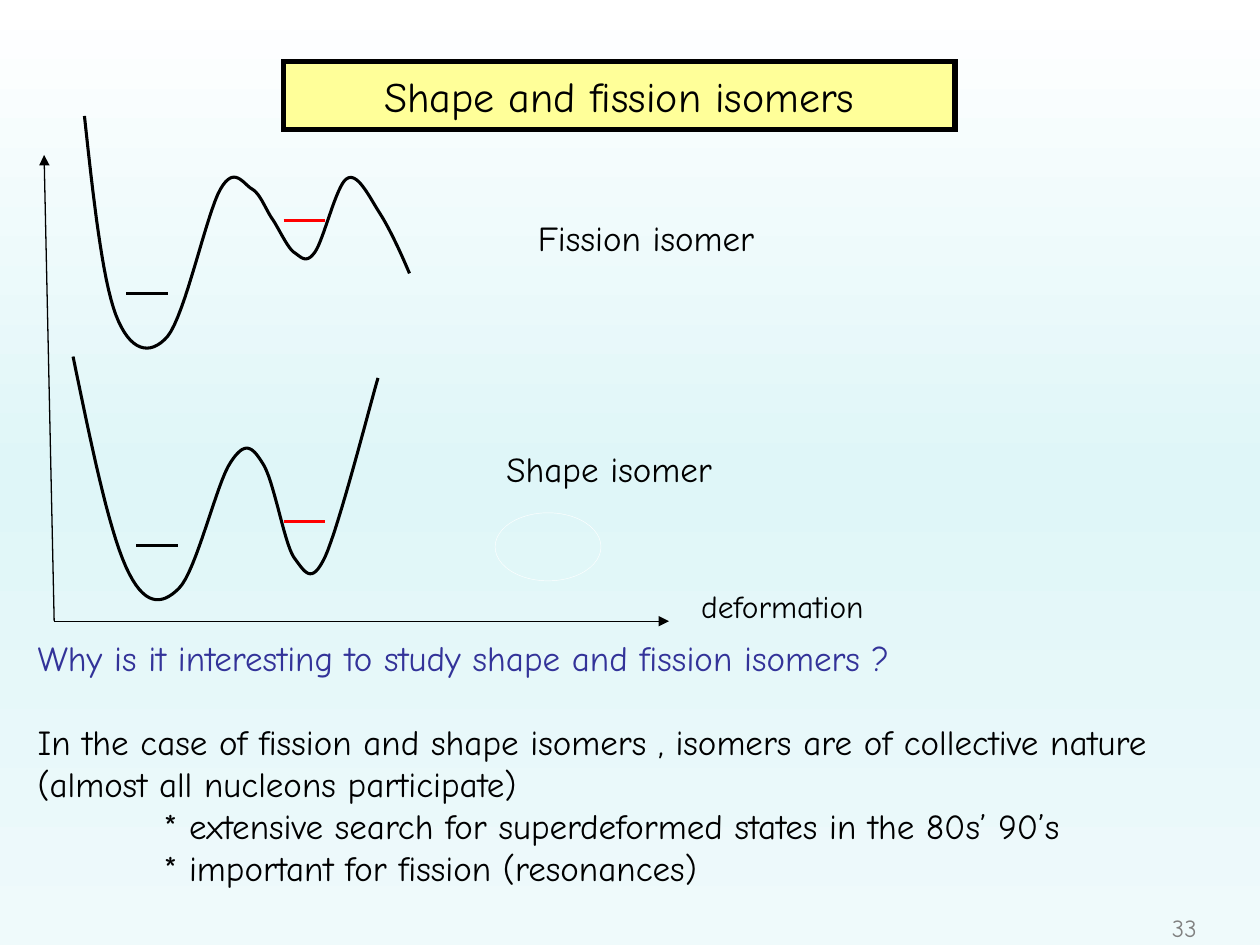
from copy import deepcopy
from dataclasses import dataclass

from lxml.etree import SubElement
from pptx import Presentation
from pptx.dml.color import RGBColor
from pptx.enum.shapes import MSO_CONNECTOR, MSO_SHAPE
from pptx.enum.text import MSO_ANCHOR, PP_ALIGN
from pptx.oxml.ns import qn
from pptx.util import Inches, Pt


@dataclass(frozen=True)
class Theme:
    font: str = "Comic Neue"
    black: str = "000000"
    white: str = "FFFFFF"
    red: str = "FF0000"
    blue: str = "333399"
    grey: str = "808080"
    yellow: str = "FFFF99"
    background: tuple = ((0, "FFFFFF"), (0.5, "DFF6F8"), (1, "EFFAFB"))
    title_size: int = 24
    body_size: int = 20
    axis_size: int = 18
    number_size: int = 14
    title_line: float = 3
    curve_line: float = 1.75
    axis_line: float = 0.75
    hairline: float = 0.25


THEME = Theme()

# Start point, then cubic segments (two control points and an end point each).
FISSION_CURVE = (
    (0.67, 0.92),
    ((0.74, 1.56), (0.81, 2.21), (0.92, 2.5)),
    ((1.03, 2.79), (1.19, 2.83), (1.33, 2.67)),
    ((1.47, 2.5), (1.64, 1.69), (1.75, 1.5)),
    ((1.86, 1.31), (1.93, 1.46), (2, 1.5)),
    ((2.07, 1.54), (2.11, 1.67), (2.17, 1.75)),
    ((2.22, 1.83), (2.28, 1.96), (2.33, 2)),
    ((2.39, 2.04), (2.43, 2.1), (2.5, 2)),
    ((2.57, 1.9), (2.67, 1.47), (2.75, 1.42)),
    ((2.83, 1.36), (2.92, 1.54), (3, 1.67)),
    ((3.08, 1.79), (3.17, 1.98), (3.25, 2.17)),
)
SHAPE_CURVE = (
    (0.58, 2.83),
    ((0.72, 3.51), (0.86, 4.19), (1, 4.5)),
    ((1.14, 4.81), (1.28, 4.81), (1.42, 4.67)),
    ((1.56, 4.53), (1.72, 3.83), (1.83, 3.67)),
    ((1.94, 3.5), (2, 3.54), (2.08, 3.67)),
    ((2.17, 3.79), (2.25, 4.29), (2.33, 4.42)),
    ((2.42, 4.54), (2.47, 4.65), (2.58, 4.42)),
    ((2.69, 4.18), (2.93, 3.24), (3, 3)),
)
ORIGIN = (0.43, 4.93)
LEVEL_WIDTH = 0.33
BODY = (
    ("Why is it interesting to study shape and fission isomers ?", {"color": THEME.blue}),
    ("In the case of fission and shape isomers , isomers are of collective nature",
     {"before": 24}),
    ("(almost all nucleons participate)", {}),
    ("* extensive search for superdeformed states in the 80s’ 90’s", {"indent": 1}),
    ("* important for fission (resonances)", {"indent": 1}),
)


def set_background(slide):
    fill = slide.background.fill
    fill.gradient()
    fill.gradient_angle = 270
    stop_list = slide.element.find(".//" + qn("a:gsLst"))
    stop_list.append(deepcopy(stop_list[0]))
    for stop, (position, color) in zip(fill.gradient_stops, THEME.background):
        stop.position = position
        stop.color.rgb = RGBColor.from_string(color)


def set_line(shape, color, width):
    shape.line.color.rgb = RGBColor.from_string(color)
    shape.line.width = Pt(width)


def write(paragraph, text, size=THEME.body_size, color=THEME.black,
          align=PP_ALIGN.LEFT, before=0, indent=0):
    if indent:
        paragraph._p.get_or_add_pPr().set("marL", str(Inches(indent)))
    paragraph.text = text
    for name, value in {"alignment": align, "space_before": Pt(before)}.items():
        setattr(paragraph, name, value)
    for name, value in {"name": THEME.font, "size": Pt(size), "bold": False}.items():
        setattr(paragraph.font, name, value)
    paragraph.font.color.rgb = RGBColor.from_string(color)


def add_title(slide, text):
    title = slide.shapes.title
    place = {"left": 2.25, "top": 0.49, "width": 5.33, "height": 0.54}
    for name, value in place.items():
        setattr(title, name, Inches(value))
    title.fill.solid()
    title.fill.fore_color.rgb = RGBColor.from_string(THEME.yellow)
    set_line(title, THEME.black, THEME.title_line)
    SubElement(title.line._get_or_add_ln(), qn("a:miter"), lim="800000")
    title.text_frame.vertical_anchor = MSO_ANCHOR.MIDDLE
    write(title.text_frame.paragraphs[0], text, THEME.title_size, align=PP_ALIGN.CENTER)


def add_text(slide, box, lines):
    """Add a text box; each line is a pair of text and format values."""
    frame = slide.shapes.add_textbox(*map(Inches, box)).text_frame
    frame.word_wrap = True
    for index, (text, style) in enumerate(lines):
        paragraph = frame.add_paragraph() if index else frame.paragraphs[0]
        write(paragraph, text, **style)


def add_segment(shapes, start, end, color, width, arrow=False):
    segment = shapes.add_connector(MSO_CONNECTOR.STRAIGHT, *map(Inches, (*start, *end)))
    set_line(segment, color, width)
    if arrow:
        SubElement(segment.line._get_or_add_ln(), qn("a:tailEnd"), type="triangle")
    SubElement(segment._element.spPr, qn("a:effectLst"))


def bezier_points(curve, steps=16):
    """Yield points, as lengths, along the cubic segments after the start point."""
    start = curve[0]
    for first, second, end in curve[1:]:
        for step in range(1, steps + 1):
            t = step / steps
            weights = ((1 - t) ** 3, 3 * t * (1 - t) ** 2, 3 * t ** 2 * (1 - t), t ** 3)
            yield tuple(
                Inches(sum(w * p[axis] for w, p in zip(weights, (start, first, second, end))))
                for axis in (0, 1)
            )
        start = end


def add_potential(shapes, curve, ground, isomer):
    """Draw a potential curve with its ground-state and isomer levels."""
    builder = shapes.build_freeform(*map(Inches, curve[0]))
    builder.add_line_segments(bezier_points(curve), close=False)
    potential = builder.convert_to_shape()
    potential.shadow.inherit = False
    potential.fill.background()
    set_line(potential, THEME.black, THEME.curve_line)
    for (x, y), color in ((ground, THEME.black), (isomer, THEME.red)):
        add_segment(shapes, (x, y), (x + LEVEL_WIDTH, y), color, THEME.curve_line)


def add_ellipse(slide, box):
    ellipse = slide.shapes.add_shape(MSO_SHAPE.OVAL, *map(Inches, box))
    ellipse.shadow.inherit = False
    ellipse.fill.background()
    set_line(ellipse, THEME.white, THEME.hairline)


def main():
    presentation = Presentation()
    presentation.slide_width = Inches(10)
    presentation.slide_height = Inches(7.5)
    slide = presentation.slides.add_slide(presentation.slide_layouts[5])
    set_background(slide)

    add_text(slide, (0.2, 5, 9.8, 2.1), BODY)
    add_title(slide, "Shape and fission isomers")
    add_ellipse(slide, (3.93, 4.07, 0.84, 0.54))
    add_text(slide, (3.92, 3.5, 1.94, 0.43), [("Shape isomer", {})])
    add_text(slide, (4.17, 1.67, 2.03, 0.43), [("Fission isomer", {})])

    fission_group = slide.shapes.add_group_shape()
    add_potential(fission_group.shapes, FISSION_CURVE, (1, 2.33), (2.25, 1.75))
    add_potential(slide.shapes, SHAPE_CURVE, (1.08, 4.33), (2.25, 4.14))

    for axis_end in ((0.35, 1.23), (5.31, ORIGIN[1])):
        add_segment(slide.shapes, ORIGIN, axis_end, THEME.black, THEME.axis_line, arrow=True)
    add_text(slide, (5.39, 4.61, 1.64, 0.4),
             [("deformation", {"size": THEME.axis_size, "align": PP_ALIGN.CENTER})])
    add_text(slide, (9.16, 7.2, 0.48, 0.33),
             [("33", {"size": THEME.number_size, "color": THEME.grey,
                      "align": PP_ALIGN.CENTER})])
    presentation.save("out.pptx")


if __name__ == "__main__":
    main()
